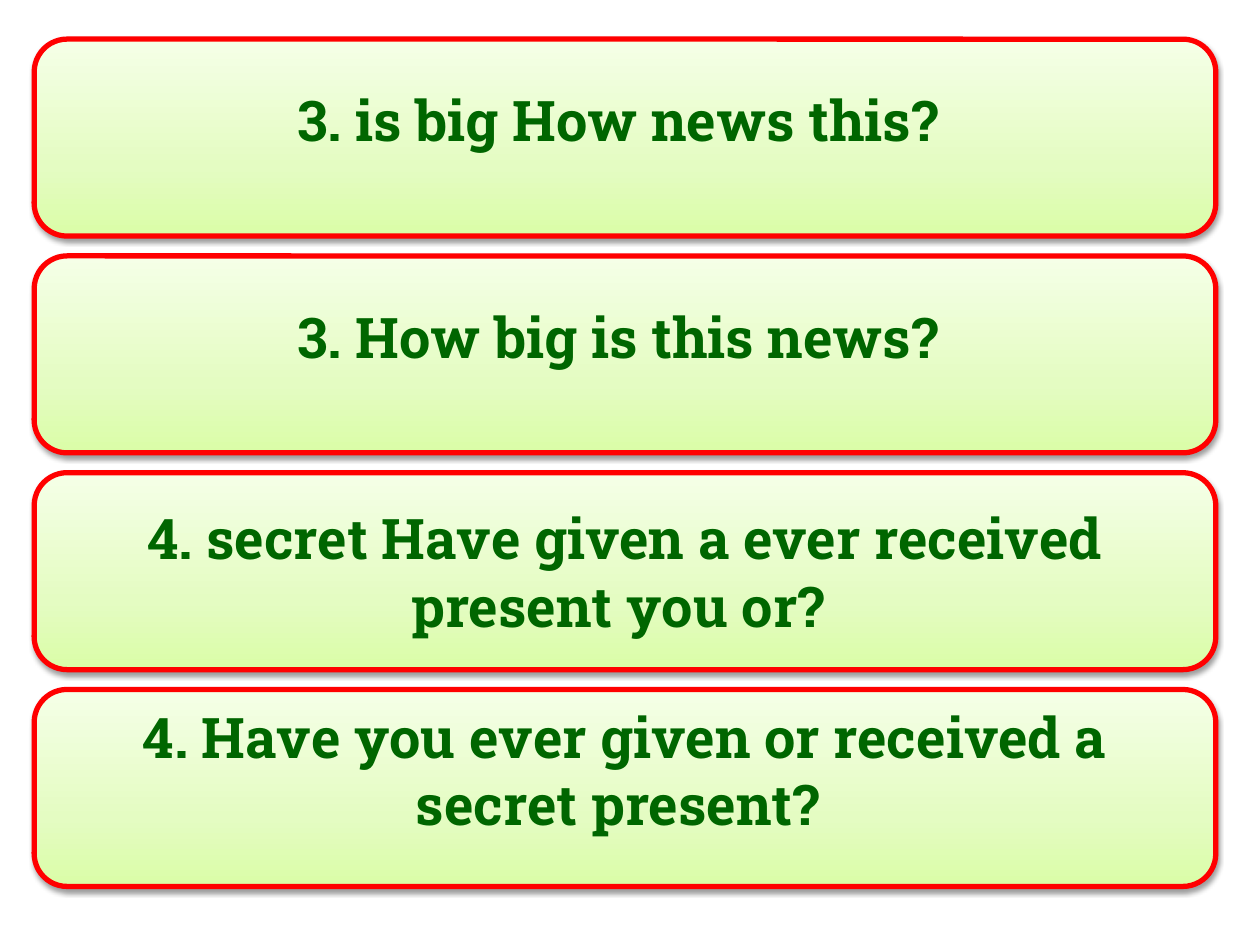
from lxml import etree
from pptx import Presentation
from pptx.dml.color import RGBColor
from pptx.enum.shapes import MSO_SHAPE
from pptx.enum.text import MSO_ANCHOR, PP_ALIGN
from pptx.oxml.ns import qn
from pptx.util import Cm, Pt

ROUNDED = MSO_SHAPE.ROUNDED_RECTANGLE
MIDDLE = MSO_ANCHOR.MIDDLE
CENTER = PP_ALIGN.CENTER

# Content: sentence and whether it sits raised above the middle of its card
CARDS = [
    ("3. is big How news this? ", True),
    ("3. How big is this news? ", True),
    ("4. secret Have given a ever received present you or? ", False),
    ("4. Have you ever given or received a secret present? ", True),
]
GRADIENT = [(0, "DAFDA7"), (35, "E4FCC2"), (100, "F5FFE7")]
RED, GREEN = "FF0000", "006600"

# Layout in cm
LEFT, TOP, WIDTH, HEIGHT, PITCH = 0.69, 0.79, 23.82, 3.97, 4.37
INSET, RAISE = 0.13, 0.73


def rgb(value):
    return RGBColor.from_string(value)


def add_color(parent, value):
    return etree.SubElement(parent, qn("a:srgbClr"), val=value)


def set_gradient(sp):
    sp.fill.gradient()
    sp.fill.gradient_angle = 90
    stops = sp._element.spPr.find(".//" + qn("a:gsLst"))
    for stop in list(stops):
        stops.remove(stop)
    for percent, value in GRADIENT:
        stop = etree.SubElement(stops, qn("a:gs"), pos=str(percent * 1000))
        add_color(stop, value)


def set_shadow(sp):
    sp.shadow.inherit = False
    effects = sp._element.spPr.find(qn("a:effectLst"))
    shadow = etree.SubElement(effects, qn("a:outerShdw"), blurRad=str(Pt(3.1)),
                              dist=str(Pt(1.6)), dir="5400000", rotWithShape="0")
    etree.SubElement(add_color(shadow, "000000"), qn("a:alpha"), val="38000")


def add_card(s, row, text, raised):
    sp = s.shapes.add_shape(ROUNDED, Cm(LEFT), Cm(TOP + row * PITCH),
                            Cm(WIDTH), Cm(HEIGHT))
    set_gradient(sp)
    sp.line.color.rgb = rgb(RED)
    sp.line.width = Pt(3)
    set_shadow(sp)

    # Sentence
    tf = sp.text_frame
    tf.word_wrap = True
    tf.vertical_anchor = MIDDLE
    tf.margin_top = Cm(INSET)
    tf.margin_bottom = Cm(INSET + (RAISE if raised else 0))
    tf.text = text
    p = tf.paragraphs[0]
    p.alignment = CENTER
    font = p.runs[0].font
    font.name, font.size, font.bold = "Roboto Slab", Pt(32), True
    font.color.rgb = rgb(GREEN)


def main():
    prs = Presentation()
    prs.slide_width, prs.slide_height = Cm(25.4), Cm(19.05)
    s = prs.slides.add_slide(prs.slide_layouts[6])
    for row, (text, raised) in enumerate(CARDS):
        add_card(s, row, text, raised)
    prs.save("out.pptx")


if __name__ == "__main__":
    main()
